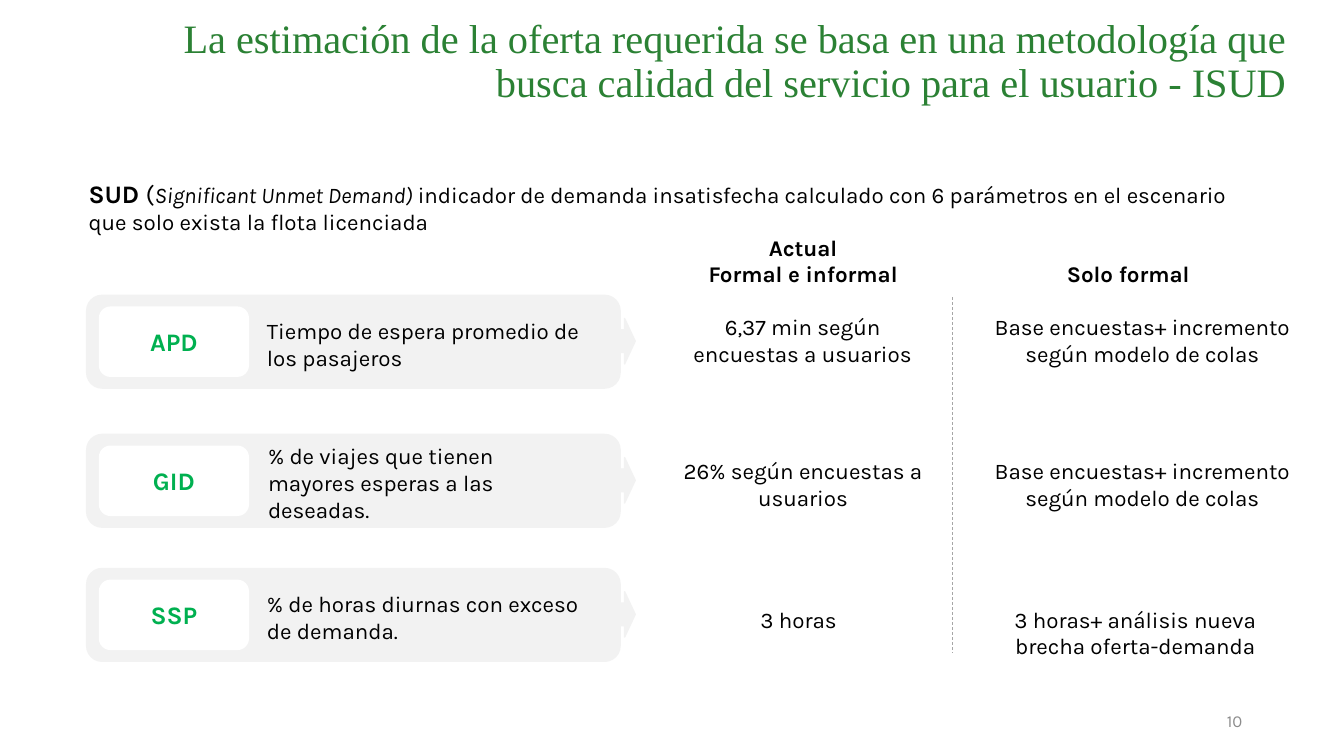
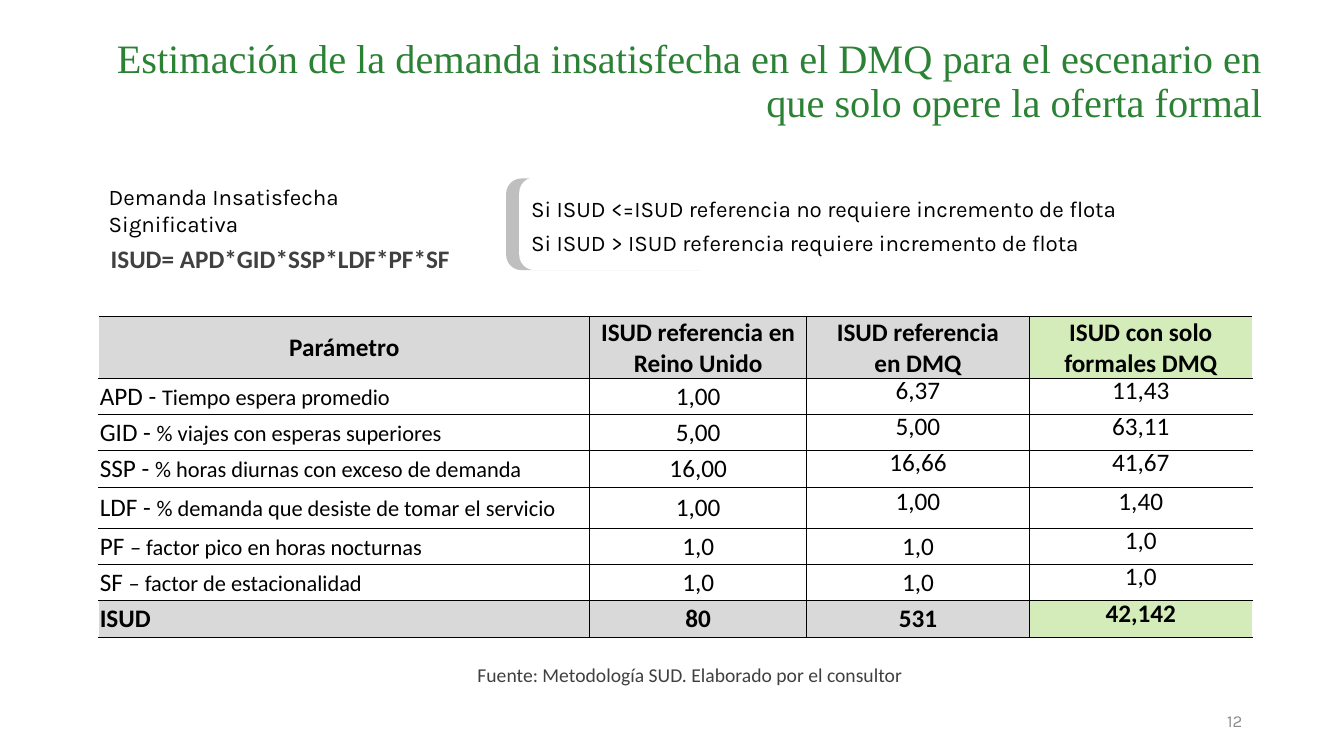
"""Builds two slides on the ISUD unmet demand method."""
from lxml import etree
from pptx import Presentation
from pptx.dml.color import RGBColor
from pptx.enum.dml import MSO_LINE
from pptx.enum.shapes import MSO_CONNECTOR, MSO_SHAPE
from pptx.enum.text import MSO_ANCHOR, PP_ALIGN
from pptx.oxml.ns import qn
from pptx.util import Inches, Pt

HUES = {"title": "2B8134", "code": "00B050", "text": "000000", "soft": "404040",
        "page": "8C8C8C", "band": "F2F2F2", "rule": "A6A6A6", "brace": "BFBFBF",
        "head": "D9D9D9", "mark": "D3ECB9", "white": "FFFFFF"}
LEFT, MID, RIGHT = PP_ALIGN.LEFT, PP_ALIGN.CENTER, PP_ALIGN.RIGHT

INTRO = [("SUD ", 18, True, False), ("(", 18, False, False),
         ("Significant Unmet Demand) ", 16, False, True),
         ("indicador de demanda insatisfecha calculado con 6 parámetros en el "
          "escenario que solo exista la flota licenciada", 16, False, False)]
HEADS = [(["Actual", "Formal e informal"], (6.92, 2.27, 2.09, 0.64)),
         (["Solo formal"], (10.47, 2.53, 1.44, 0.37))]
BASE = ("Base encuestas+ incremento según modelo de colas", 9.68, 3.3)
BANDS = [
    ("APD", 2.93, 3.06, ("Tiempo de espera promedio de los pasajeros", 2.55, 3.44),
     [("6,37 min según encuestas a usuarios", 6.57, 2.78), BASE]),
    ("GID", 4.31, 4.49, ("% de viajes que tienen mayores esperas a las deseadas.", 2.56, 3.18),
     [("26% según encuestas a usuarios", 6.51, 2.91), BASE]),
    ("SSP", 5.64, 5.96, ("% de horas diurnas con exceso de demanda.", 2.55, 3.44),
     [("3 horas", 7.26, 1.32), ("3 horas+ análisis nueva brecha oferta-demanda", 9.85, 2.82)]),
]

RULES = ["Si ISUD <=ISUD referencia no requiere incremento de flota",
         "Si ISUD > ISUD referencia requiere incremento de flota"]
COLS = [4.87, 2.15, 2.21, 2.21]
ROWS = [0.57, 0.36, 0.36, 0.36, 0.41, 0.36, 0.36, 0.36]
TOP = [["Parámetro"], ["ISUD referencia en", "Reino Unido"],
       ["ISUD referencia", "en DMQ"], ["ISUD con solo", "formales DMQ"]]
DATA = [
    (("APD - ", "Tiempo espera promedio"), "1,00", "6,37", "11,43"),
    (("GID - ", "% viajes con esperas superiores"), "5,00", "5,00", "63,11"),
    (("SSP - ", "% horas diurnas con exceso de demanda"), "16,00", "16,66", "41,67"),
    (("LDF - ", "% demanda que desiste de tomar el servicio"), "1,00", "1,00", "1,40"),
    (("PF ", "– factor pico en horas nocturnas"), "1,0", "1,0", "1,0"),
    (("SF ", "– factor de estacionalidad"), "1,0", "1,0", "1,0"),
]
TOTAL = ["ISUD", "80", "531", "42,142"]


def hue(name):
    return RGBColor.from_string(HUES[name])


def write(frame, paras, size=16, face="Karla", color="text", bold=False,
          align=LEFT, lead=None, gap=0):
    """Fills a frame; a paragraph is a string or a list of (text, size, bold, italic)."""
    for i, item in enumerate(paras):
        para = frame.paragraphs[0] if i == 0 else frame.add_paragraph()
        para.alignment = align
        font = para.font
        font.size, font.name, font.bold = Pt(size), face, bold
        font.color.rgb = hue(color)
        if lead:
            para.line_spacing = lead
        if i and gap:
            para.space_before = Pt(gap)
        for part in [(item, None, None, None)] if isinstance(item, str) else item:
            run = para.add_run()
            run.text, run.font.size = part[0], Pt(part[1]) if part[1] else None
            run.font.bold, run.font.italic = part[2:]


def label(slide, box, paras, wrap=True, anchor=MSO_ANCHOR.TOP, **style):
    frame = slide.shapes.add_textbox(*map(Inches, box)).text_frame
    frame.word_wrap, frame.vertical_anchor = wrap, anchor
    write(frame, paras, **style)


def block(slide, kind, box, fill, line=None):
    shape = slide.shapes.add_shape(kind, *map(Inches, box))
    shape.shadow.inherit = False
    shape.fill.solid()
    shape.fill.fore_color.rgb = hue(fill)
    if line:
        shape.line.color.rgb, shape.line.width = hue(line), Pt(1)
    else:
        shape.line.fill.background()
    return shape


def start(deck, text, box, page):
    """Adds a slide with its title and page number."""
    slide = deck.slides.add_slide(deck.slide_layouts[5])
    title = slide.shapes.title
    title.left, title.top, title.width, title.height = map(Inches, box)
    title.text_frame.vertical_anchor = MSO_ANCHOR.BOTTOM
    title.text_frame.word_wrap = True
    write(title.text_frame, [text], 28.8, "Times New Roman", "title", align=RIGHT, lead=0.9)
    label(slide, (9.42, 6.95, 3, 0.4), [page], anchor=MSO_ANCHOR.MIDDLE,
          size=12, color="page", align=RIGHT)
    return slide


def method(deck):
    slide = start(deck, "La estimación de la oferta requerida se basa en una metodología que "
                  "busca calidad del servicio para el usuario - ISUD",
                  (1.34, 0.41, 11.52, 0.69), "10")
    label(slide, (0.78, 1.72, 11.63, 0.67), [INTRO])
    for paras, box in HEADS:
        label(slide, box, paras, wrap=False, bold=True, align=MID)
    for code, top, line, (note, left, wide), facts in BANDS:
        block(slide, MSO_SHAPE.ROUNDED_RECTANGLE, (0.86, top, 5.29, 0.92), "band", "band")
        chip = block(slide, MSO_SHAPE.ROUNDED_RECTANGLE, (0.98, top + 0.11, 1.49, 0.7), "white")
        write(chip.text_frame, [code], 18, color="code", bold=True, align=MID)
        label(slide, (left, top + 0.02, wide, 0.92), [note], anchor=MSO_ANCHOR.MIDDLE)
        block(slide, MSO_SHAPE.RIGHT_ARROW, (6.09, top + 0.23, 0.21, 0.45), "band", "band")
        for text, left, wide in facts:
            label(slide, (left, line, wide, 0.64), [text], align=MID)
    rule = slide.shapes.add_connector(MSO_CONNECTOR.STRAIGHT,
                                      *map(Inches, (9.45, 2.95, 9.45, 6.48)))
    rule.line.color.rgb, rule.line.width = hue("rule"), Pt(0.5)
    rule.line.dash_style = MSO_LINE.DASH
    etree.SubElement(rule._element.spPr, qn("a:effectLst"))


def border(cell, sides):
    props = cell._tc.get_or_add_tcPr()
    for side in sides:
        line = etree.SubElement(props, qn("a:ln" + side), w=str(Pt(0.5)))
        fill = etree.SubElement(line, qn("a:solidFill"))
        etree.SubElement(fill, qn("a:srgbClr"), val=HUES["text"])


def grid(slide):
    rows = [TOP] + DATA + [[[text] for text in TOTAL]]
    table = slide.shapes.add_table(len(ROWS), len(COLS), *map(
        Inches, (0.98, 3.14, sum(COLS), sum(ROWS)))).table
    table.first_row = table.horz_banding = False
    for col, wide in zip(table.columns, COLS):
        col.width = Inches(wide)
    end = len(ROWS) - 1
    for r, (row, high) in enumerate(zip(rows, ROWS)):
        table.rows[r].height = Inches(high)
        for c, item in enumerate(row):
            cell = table.cell(r, c)
            strong = r in (0, end)
            tight = (c == 3 and r > 0) or (c == 2 and 0 < r < 5)
            side = 0.05 if tight and not strong else 0.01
            cell.margin_left = cell.margin_right = Inches(side)
            cell.margin_top = Inches(0 if side == 0.05 else 0.01)
            cell.margin_bottom = 0
            cell.vertical_anchor = MSO_ANCHOR.MIDDLE
            border(cell, ("L" if c else "") + ("R" if c < 3 else "") + "TB")
            if strong:
                cell.fill.solid()
                cell.fill.fore_color.rgb = hue("mark" if c == 3 else "head")
                paras = item
            else:
                cell.fill.background()
                paras = [item] if c else [[(item[0], 18, None, None), (item[1], 16, None, None)]]
            write(cell.text_frame, paras, 18, "Calibri", bold=strong,
                  align=MID if c or r == 0 else LEFT, lead=Pt(14) if tight else None)
            if tight:
                cell.text_frame.paragraphs[0].space_before = Pt(7)


def demand(deck):
    slide = start(deck, "Estimación de la demanda insatisfecha en el DMQ para el escenario en "
                  "que solo opere la oferta formal", (0.59, 0.61, 12.03, 0.69), "12")
    for left, top, high, fill in [(5.02, 1.77, 0.91, "brace"), (5.15, 1.76, 0.92, "white")]:
        block(slide, MSO_SHAPE.ROUNDED_RECTANGLE, (left, top, 2.07, high), fill)
    grid(slide)
    label(slide, (5.17, 1.89, 6.09, 0.71), RULES, wrap=False, gap=5)
    label(slide, (0.98, 1.77, 2.7, 0.64), ["Demanda Insatisfecha Significativa"])
    calm = dict(face="Calibri", color="soft", align=MID, lead=Pt(14))
    label(slide, (0.98, 2.47, 3.6, 0.3), ["ISUD= APD*GID*SSP*LDF*PF*SF"],
          wrap=False, size=18, bold=True, **calm)
    label(slide, (3.51, 6.57, 6.67, 0.3),
          ["Fuente: Metodología SUD. Elaborado por el consultor"], size=14, **calm)


def main():
    deck = Presentation()
    deck.slide_width, deck.slide_height = Inches(13.33), Inches(7.5)
    method(deck)
    demand(deck)
    deck.save("out.pptx")


if __name__ == "__main__":
    main()
